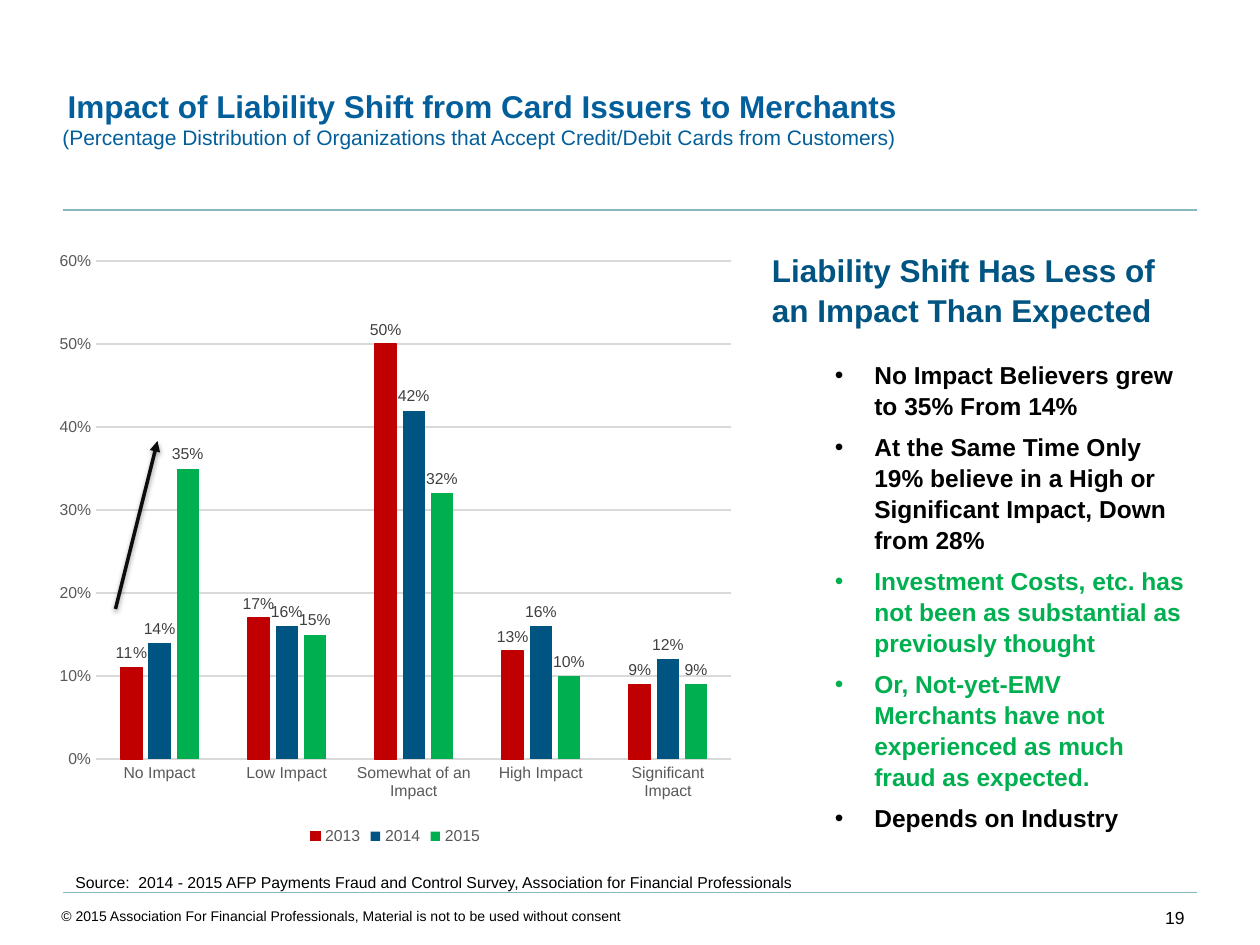
from lxml.etree import SubElement as Sub
from pptx import Presentation
from pptx.chart.data import CategoryChartData as Data
from pptx.dml.color import RGBColor as Rgb
from pptx.enum.chart import XL_CHART_TYPE as Kind
from pptx.enum.chart import XL_LABEL_POSITION as Spot
from pptx.enum.chart import XL_LEGEND_POSITION as Side
from pptx.enum.chart import XL_TICK_MARK as Tick
from pptx.enum.shapes import MSO_CONNECTOR as Conn
from pptx.enum.text import PP_ALIGN as Align
from pptx.oxml.ns import qn
from pptx.util import Pt

HUES = {"rule": "87B8C0", "title": "035F9B", "navy": "005481", "red": "C00000",
        "green": "00B050", "black": "000000", "ink": "0D0D0D", "axis": "595959",
        "label": "404040", "grid": "D9D9D9"}
CATS = ["No Impact", "Low Impact", "Somewhat of an Impact", "High Impact",
        "Significant Impact"]
YEARS = [("2013", "red", [0.11, 0.17, 0.5, 0.13, 0.09]),
         ("2014", "navy", [0.14, 0.16, 0.42, 0.16, 0.12]),
         ("2015", "green", [0.35, 0.15, 0.32, 0.1, 0.09])]
POINTS = [("No Impact Believers grew to 35% From 14%", "black"),
          ("At the Same Time Only 19% believe in a High or Significant Impact, "
           "Down from 28%", "black"),
          ("Investment Costs, etc. has not been as substantial as previously "
           "thought", "green"),
          ("Or, Not-yet-EMV Merchants have not experienced as much fraud as "
           "expected.", "green"),
          ("Depends on Industry", "black")]


def hue(name):
    """Return the named colour."""
    return Rgb.from_string(HUES[name])


def style(font, size, name, bold=False):
    """Set the face, size, colour and weight of a font."""
    font.name, font.size, font.bold = "Arial", Pt(size), bold
    font.color.rgb = hue(name)


def add_run(para, text, size, name, bold=False):
    """Add one styled run to a paragraph."""
    run = para.add_run()
    run.text = text
    style(run.font, size, name, bold)


def add_box(slide, box):
    """Add a wrapping text box and return its frame."""
    frame = slide.shapes.add_textbox(*map(Pt, box)).text_frame
    frame.word_wrap = True
    return frame


def add_note(slide, box, text, size, align=Align.LEFT):
    """Add a box with one line of black text."""
    para = add_box(slide, box).paragraphs[0]
    para.alignment = align
    add_run(para, text, size, "black")


def add_line(slide, start, end, name, width):
    """Add a straight line and return it with its effect list."""
    line = slide.shapes.add_connector(Conn.STRAIGHT, *map(Pt, start + end))
    line.line.color.rgb = hue(name)
    line.line.width = Pt(width)
    return line, Sub(line._element.spPr, qn("a:effectLst"))


def add_arrow(slide, start, end):
    """Add the rising arrow with its soft shadow."""
    line, fx = add_line(slide, start, end, "ink", 2)
    Sub(line.line._get_or_add_ln(), qn("a:tailEnd"), type="triangle")
    shade = Sub(fx, qn("a:outerShdw"), blurRad=str(Pt(3.1)), dist=str(Pt(1.6)),
                dir="5400000", rotWithShape="0")
    tone = Sub(shade, qn("a:srgbClr"), val=HUES["black"])
    Sub(tone, qn("a:alpha"), val="38000")


def add_head(slide, box):
    """Add the centred title and subtitle."""
    frame = add_box(slide, box)
    top, sub = frame.paragraphs[0], frame.add_paragraph()
    top.alignment = sub.alignment = Align.CENTER
    add_run(top, "Impact of Liability Shift from Card Issuers to Merchants",
            18, "title", True)
    add_run(sub, "(Percentage Distribution of Organizations that Accept "
            "Credit/Debit Cards from Customers) ", 12, "title")


def add_points(slide, box):
    """Add the side heading and its bullets."""
    frame = add_box(slide, box)
    head = frame.paragraphs[0]
    head.line_spacing = 1.05
    add_run(head, "Liability Shift Has Less of an Impact Than Expected",
            18, "navy", True)
    for i, (text, name) in enumerate(POINTS):
        para = frame.add_paragraph()
        para.level = 1
        para.line_spacing = 1.05
        para.space_before = Pt(6 if i else 17)
        props = para._p.get_or_add_pPr()
        props.set("marL", str(Pt(58.5)))
        props.set("indent", str(Pt(-22.5)))
        Sub(props, qn("a:buFont"), typeface="Arial")
        Sub(props, qn("a:buChar"), char="•")
        add_run(para, text, 14, name, True)


def add_bars(slide, box):
    """Add the clustered column chart of the three years."""
    data = Data(number_format="0%")
    data.categories = CATS
    for year, _, vals in YEARS:
        data.add_series(year, vals)
    chart = slide.shapes.add_chart(Kind.COLUMN_CLUSTERED, *map(Pt, box), data).chart
    style(chart.font, 10, "black")
    chart.has_title = False
    chart.has_legend = True
    chart.legend.position = Side.BOTTOM
    chart.legend.include_in_layout = False
    style(chart.legend.font, 9, "axis")
    cat, val = chart.category_axis, chart.value_axis
    for axis in (cat, val):
        axis.major_tick_mark = axis.minor_tick_mark = Tick.NONE
        style(axis.tick_labels.font, 9, "axis")
    val.minimum_scale, val.maximum_scale, val.major_unit = 0, 0.6, 0.1
    val.tick_labels.number_format = "0%"
    val.tick_labels.number_format_is_linked = False
    val.format.line.fill.background()
    for line in (cat.format.line, val.major_gridlines.format.line):
        line.color.rgb = hue("grid")
        line.width = Pt(0.75)
    plot = chart.plots[0]
    plot.gap_width, plot.overlap, plot.vary_by_categories = 219, -27, False
    for bar, (_, name, _) in zip(plot.series, YEARS):
        bar.invert_if_negative = False
        bar.format.fill.solid()
        bar.format.fill.fore_color.rgb = hue(name)
        tags = bar.data_labels
        tags.show_value = True
        tags.position = Spot.OUTSIDE_END
        tags.number_format = "0%"
        tags.number_format_is_linked = False
        style(tags.font, 9, "label")
    edge = plot.series[0].format.line
    edge.color.rgb = hue("red")
    edge.width = Pt(0.75)


def main():
    """Build the slide and save it."""
    deck = Presentation()
    deck.slide_width, deck.slide_height = Pt(720), Pt(540)
    slide = deck.slides.add_slide(deck.slide_layouts[6])
    for y in (120, 510):
        add_line(slide, (36, y), (684, y), "rule", 1)
    add_head(slide, (5.76, 46, 540, 44))
    add_note(slide, (36, 495.2, 434, 18), "Source:  2014 - 2015 AFP Payments Fraud "
             "and Control Survey, Association for Financial Professionals", 9)
    add_points(slide, (434, 139, 250, 330))
    add_note(slide, (648, 515, 36, 25), "19", 10, Align.RIGHT)
    add_note(slide, (28, 515, 609, 25), "© 2015 Association For Financial "
             "Professionals, Material is not to be used without consent", 8)
    add_bars(slide, (26, 137, 400, 349))
    add_arrow(slide, (66, 348), (90, 252))
    deck.save("out.pptx")


if __name__ == "__main__":
    main()
